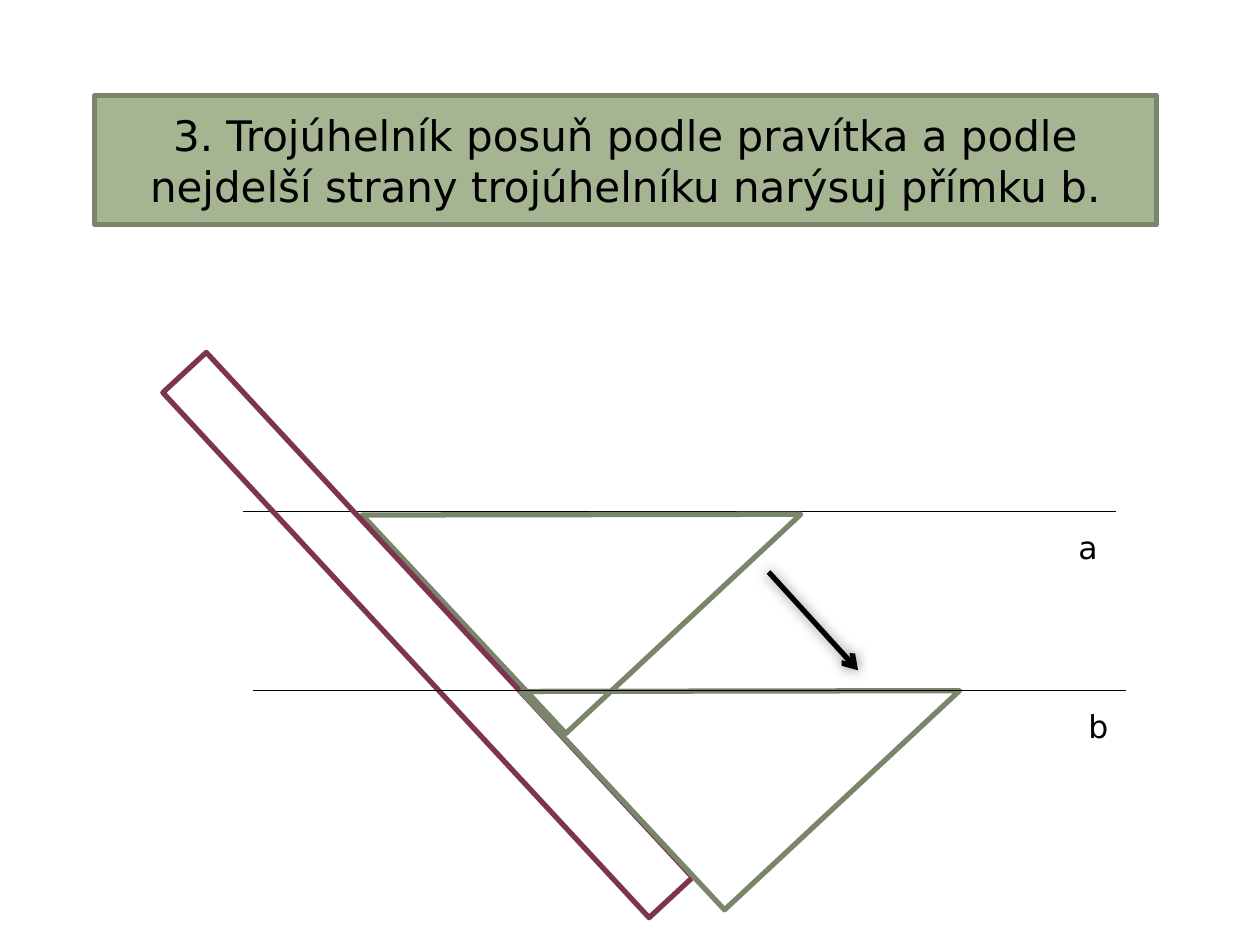
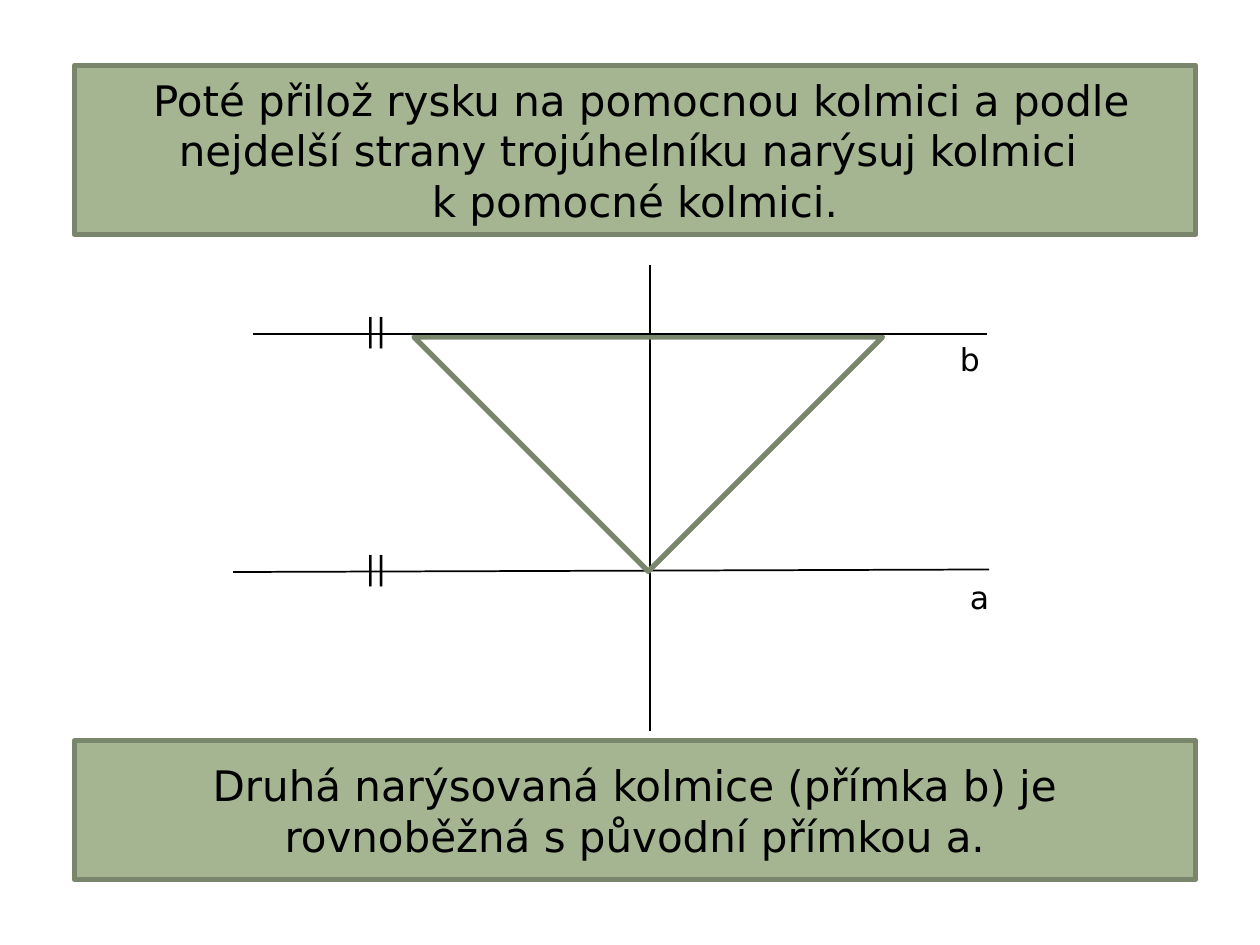
"""Build two slides on drawing parallel lines with a ruler and a set square."""
from lxml.etree import SubElement as Sub
from pptx import Presentation
from pptx.dml.color import RGBColor as RGB
from pptx.enum.shapes import MSO_CONNECTOR as Conn, MSO_SHAPE as Kind
from pptx.enum.text import MSO_ANCHOR as Anchor, PP_ALIGN as Align
from pptx.oxml.ns import qn
from pptx.util import Pt

PX = 9144
FONT = "DejaVu Sans"
BLACK = RGB(0x00, 0x00, 0x00)
SAGE = RGB(0xA5, 0xB5, 0x92)
OLIVE = RGB(0x7A, 0x86, 0x6C)
WINE = RGB(0x7C, 0x35, 0x4D)


def emu(*sizes):
    """Turn px lengths into EMU."""
    return [size * PX for size in sizes]


def style(para, size):
    """Set the shared font on a paragraph."""
    font = para.font
    font.name = FONT
    font.size = Pt(size)
    font.color.rgb = BLACK


def shape(slide, kind, box, edge, fill=None, turn=0):
    """Add an outlined shape, hollow unless a fill is given."""
    item = slide.shapes.add_shape(kind, *emu(*box))
    item.shadow.inherit = False
    item.rotation = turn
    item.line.color.rgb = edge
    item.line.width = Pt(3)
    if fill is None:
        item.fill.background()
    else:
        item.fill.solid()
        item.fill.fore_color.rgb = fill
    return item


def banner(slide, box, text):
    """Add a filled box with centred text, one paragraph per line."""
    frame = shape(slide, Kind.RECTANGLE, box, OLIVE, SAGE).text_frame
    frame.word_wrap = True
    frame.vertical_anchor = Anchor.MIDDLE
    frame.text = text
    for para in frame.paragraphs:
        para.alignment = Align.CENTER
        style(para, 24)


def square(slide, box, turn):
    """Add a set square turned with its longest side up."""
    shape(slide, Kind.RIGHT_TRIANGLE, box, OLIVE, turn=turn)


def line(slide, ends, width=1):
    """Add a black line and return it with its empty effect list."""
    item = slide.shapes.add_connector(Conn.STRAIGHT, *emu(*ends))
    item.line.color.rgb = BLACK
    item.line.width = Pt(width)
    props = item.line._get_or_add_ln().getparent()
    return item, Sub(props, qn("a:effectLst"))


def arrow(slide, ends):
    """Add a thick arrow with a soft shadow."""
    item, glow = line(slide, ends, 3)
    Sub(item.line._get_or_add_ln(), qn("a:tailEnd"), type="arrow")
    shade = Sub(glow, qn("a:outerShdw"), blurRad=str(Pt(7.5)), dist="0",
                dir="0", algn="ctr", rotWithShape="0")
    tint = Sub(shade, qn("a:srgbClr"), val=str(BLACK))
    Sub(tint, qn("a:alpha"), val="50000")


def label(slide, left, top, width, text):
    """Add a short label."""
    frame = slide.shapes.add_textbox(*emu(left, top, width, 40)).text_frame
    frame.word_wrap = True
    frame.text = text
    style(frame.paragraphs[0], 18)


def shift(slide):
    """Draw the set square sliding along the ruler."""
    banner(slide, (75, 76, 843, 102),
           "3. Trojúhelník posuň podle pravítka a podle "
           "nejdelší strany trojúhelníku narýsuj přímku b.")
    line(slide, (193, 406, 886, 406))
    label(slide, 846, 414, 63, "a")
    square(slide, (334, 290, 255, 237), 317)
    shape(slide, Kind.RECTANGLE, (316, 220, 47, 568), WINE, turn=317.2)
    square(slide, (460, 430, 255, 237), 317)
    arrow(slide, (610, 454, 681, 532))
    line(slide, (201, 548, 894, 548))
    label(slide, 854, 556, 63, "b")


def normal(slide):
    """Draw the parallel line made with a helper perpendicular."""
    banner(slide, (59, 52, 890, 134),
           " Poté přilož rysku na pomocnou kolmici a podle "
           "nejdelší strany trojúhelníku narýsuj kolmici \n"
           "k pomocné kolmici.")
    banner(slide, (59, 588, 890, 110),
           "Druhá narýsovaná kolmice (přímka b) je "
           "rovnoběžná s původní přímkou a.")
    line(slide, (516, 210, 516, 580))
    line(slide, (185, 454, 785, 452))
    square(slide, (383, 136, 263, 263), 315)
    line(slide, (201, 265, 783, 265))
    for top in (241, 430):
        label(slide, 280, top, 79, "||")
    label(slide, 752, 265, 55, "b")
    label(slide, 760, 454, 47, "a")


def main():
    """Build and save the deck."""
    deck = Presentation()
    deck.slide_width, deck.slide_height = emu(1000, 750)
    for draw in (shift, normal):
        draw(deck.slides.add_slide(deck.slide_layouts[6]))
    deck.save("out.pptx")


if __name__ == "__main__":
    main()
